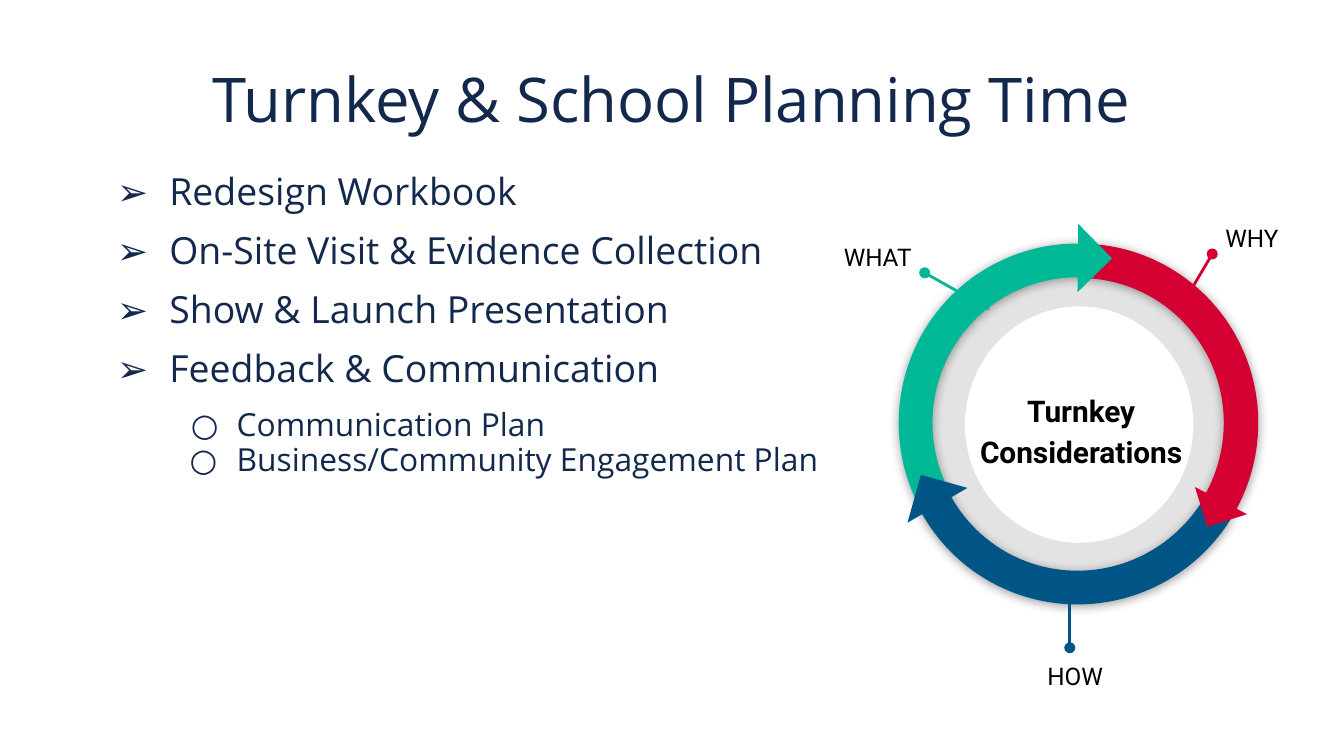
import pptx
import pptx.util
import pptx.dml.color
import pptx.enum.shapes
import pptx.enum.text
import pptx.oxml.ns
from lxml import etree

Inches, Pt = pptx.util.Inches, pptx.util.Pt
RGB = pptx.dml.color.RGBColor
SHAPE = pptx.enum.shapes.MSO_SHAPE
ALIGN = pptx.enum.text.PP_ALIGN
ANCHOR = pptx.enum.text.MSO_ANCHOR
qn = pptx.oxml.ns.qn

NAVY = RGB(0x12, 0x28, 0x4C)
BLACK = RGB(0, 0, 0)
RED = RGB(0xD5, 0x00, 0x32)
GREEN = RGB(0x00, 0xB7, 0x96)
BLUE = RGB(0x00, 0x55, 0x87)

# Content
TITLE = "Turnkey & School Planning Time"
# text, level, space before, hanging indent
ITEMS = [
    ("Redesign Workbook", 0, 0, 0.39),
    ("On-Site Visit & Evidence Collection", 0, 10, 0.39),
    ("Show & Launch Presentation", 0, 10, 0.39),
    ("Feedback & Communication", 0, 10, 0.39),
    ("Communication Plan", 1, 10, 0.34),
    ("Business/Community Engagement Plan", 1, 0, 0.35),
]
LEVELS = [("➢", 20), ("○", 17)]  # bullet, text size
CENTER = "Turnkey Considerations"
RING = (6.69, 1.81, 2.67, 2.69)
# box, turn, colour, (start, end, thickness in percent), flipped;
# parts without adjustments are arrow tips
PARTS = [
    (RING, 30.5, RED, (144.14, 0.01, 9.6), False),
    (RING, 329.5, GREEN, (143.49, 214.73, 9.4), True),
    ((7.84, 1.74, 0.36, 0.36), 225.6, GREEN, (), False),
    (RING, 210.5, BLUE, (143.16, 215.03, 9.4), True),
    ((8.93, 3.57, 0.31, 0.31), 342.6, RED, (), False),
    ((6.79, 3.58, 0.37, 0.36), 105.7, BLUE, (), False),
]
# text, box, alignment, line ends, colour
LABELS = [
    ("WHAT", (6.07, 1.67, 0.81, 0.73), ALIGN.RIGHT, (6.88, 2.03, 7.36, 2.3), GREEN),
    ("WHY", (9.02, 1.53, 0.96, 0.73), ALIGN.LEFT, (9.02, 1.89, 8.86, 2.16), RED),
    ("HOW", (7.03, 4.79, 1.94, 0.73), ALIGN.CENTER, (7.96, 4.82, 7.96, 4.31), BLUE),
]

# Widescreen slide, 16 to 9
deck = pptx.Presentation()
deck.slide_width = Inches(10)
deck.slide_height = deck.slide_width * 9 // 16
slide = deck.slides.add_slide(deck.slide_layouts[5])
shapes = slide.shapes


def add_tag(node, tag, **attrs):
    return etree.SubElement(node, qn(tag), attrs)


def set_frame(shape, pad=(0.1, 0.1), anchor=ANCHOR.TOP):
    frame = shape.text_frame
    frame.word_wrap = True
    frame.auto_size = pptx.enum.text.MSO_AUTO_SIZE.NONE
    frame.vertical_anchor = anchor
    frame.margin_left = frame.margin_right = Inches(pad[0])
    frame.margin_top = frame.margin_bottom = Inches(pad[1])
    return frame


def write(para, text, size=13, font="Roboto", color=BLACK, bold=False,
          align=ALIGN.LEFT, space=1.15, before=0):
    para.alignment, para.line_spacing = align, space
    para.space_before = Pt(before)
    run = para.add_run()
    run.text = text
    run.font.size, run.font.name, run.font.bold = Pt(size), font, bold
    run.font.color.rgb = color


def add_box(box):
    return shapes.add_textbox(*map(Inches, box))


def add_part(kind, box, color):
    part = shapes.add_shape(kind, *map(Inches, box))
    part.shadow.inherit = False
    part.fill.solid()
    part.fill.fore_color.rgb = color
    part.line.fill.background()
    return part


# Title
title = shapes.title
title.left, title.top, title.width, title.height = map(Inches, (0.69, 0.22, 8.62, 1.09))
frame = set_frame(title, (0.07, 0.04), ANCHOR.MIDDLE)
write(frame.paragraphs[0], TITLE, size=33, font="Open Sans", color=NAVY,
      align=ALIGN.CENTER, space=0.9)

# Bullet list
frame = set_frame(add_box((0.69, 1.25, 8.62, 3.57)), (0.07, 0.04))
for i, (text, level, before, hang) in enumerate(ITEMS):
    para = frame.paragraphs[0] if i == 0 else frame.add_paragraph()
    mark, size = LEVELS[level]
    para.level = level
    props = para._p.get_or_add_pPr()
    props.set("marL", str(Inches(0.5 * (level + 1))))
    props.set("indent", str(-Inches(hang)))
    add_tag(add_tag(props, "a:buClr"), "a:srgbClr", val=str(NAVY))
    add_tag(props, "a:buFont", typeface="Open Sans")
    add_tag(props, "a:buChar", char=mark)
    write(para, text, size=size, font="Open Sans", color=NAVY, space=0.9, before=before)

# Pale ring and its caption
ring = add_part(SHAPE.DONUT, (6.78, 1.88, 2.5, 2.56), BLACK)
ring.adjustments[0] = 0.16
tint = ring._element.spPr.find(".//" + qn("a:srgbClr"))
add_tag(tint, "a:alpha", val="11000")
frame = set_frame(add_box((7.16, 2.78, 1.77, 0.81)), anchor=ANCHOR.MIDDLE)
write(frame.paragraphs[0], CENTER, size=16, bold=True, align=ALIGN.CENTER)

# Cycle arcs and arrow tips
for box, turn, color, arc, flip in PARTS:
    part = add_part(SHAPE.BLOCK_ARC if arc else SHAPE.RIGHT_TRIANGLE, box, color)
    part.rotation = turn
    props = part._element.spPr
    if flip:
        props.find(qn("a:xfrm")).set("flipH", "1")
    if arc:
        start, end, thick = arc
        for i, value in enumerate((start, end, thick / 100)):
            part.adjustments[i] = value
        shade = add_tag(props.find(qn("a:effectLst")), "a:outerShdw",
                        blurRad=str(Pt(5.6)), dist=str(Pt(0.8)),
                        dir="5400000", algn="ctr", rotWithShape="0")
        add_tag(add_tag(shade, "a:srgbClr", val=str(BLACK)), "a:alpha", val="40000")

# Labels with leader lines that start in a dot
for text, box, align, ends, color in LABELS:
    line = shapes.add_connector(pptx.enum.shapes.MSO_CONNECTOR.STRAIGHT, *map(Inches, ends))
    line.line.color.rgb, line.line.width = color, Pt(1.5)
    props = line._element.spPr
    add_tag(props.find(qn("a:ln")), "a:headEnd", type="oval")
    add_tag(props, "a:effectLst")
    write(set_frame(add_box(box)).paragraphs[0], text, align=align)

deck.save("out.pptx")
